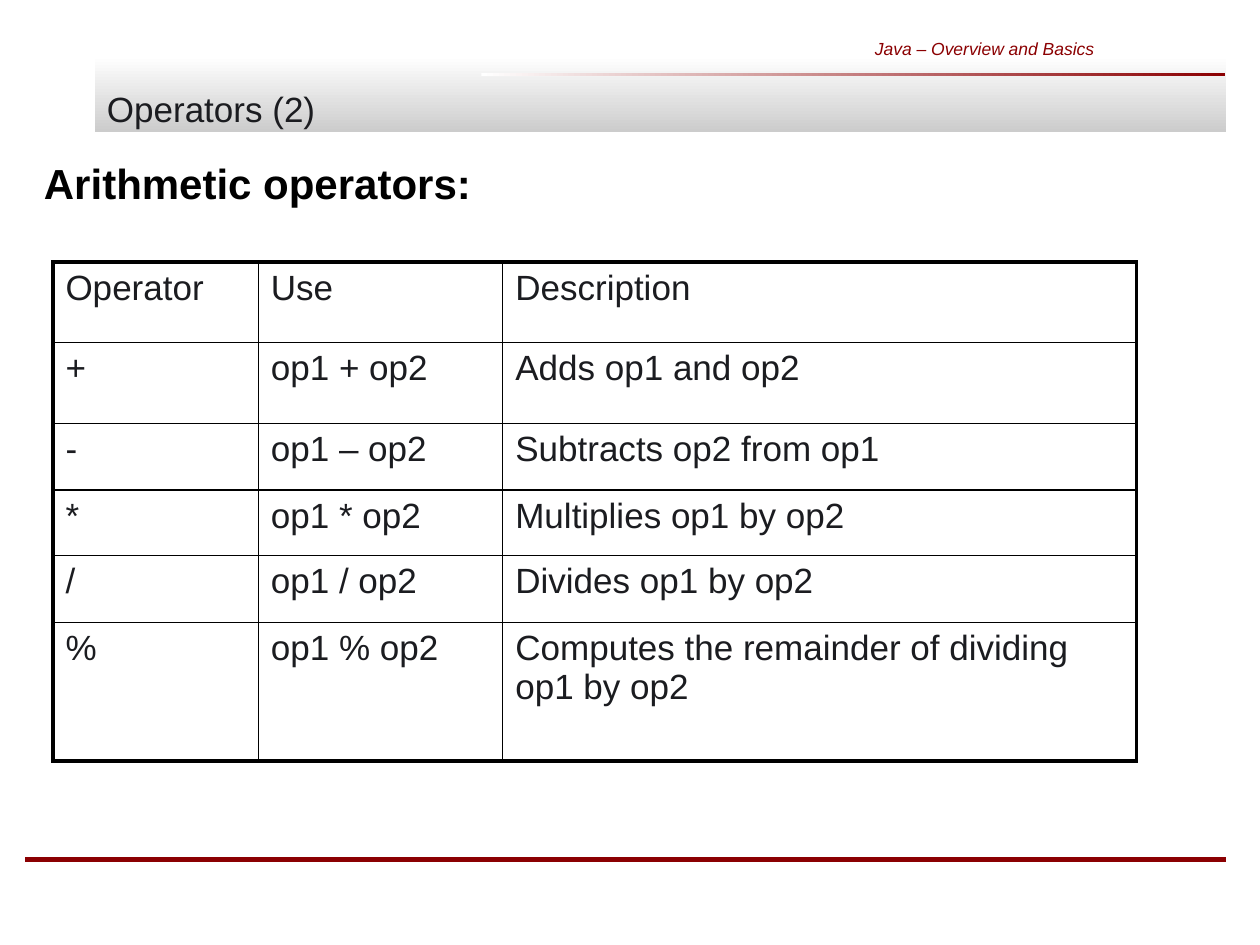
from lxml.etree import SubElement
from pptx import Presentation
from pptx.dml.color import RGBColor
from pptx.enum.shapes import MSO_CONNECTOR, MSO_SHAPE
from pptx.enum.text import MSO_ANCHOR, PP_ALIGN
from pptx.oxml import parse_xml
from pptx.oxml.ns import nsdecls, qn
from pptx.util import Inches, Pt

DARK_RED, WHITE, GREY = "8B0002", "FFFFFF", "CCCCCC"
INK, BLACK = "1B1C20", "000000"
THICK, THIN = 2.25, 1

COLUMN_WIDTHS = [1.63, 1.94, 5.03]
ROW_HEIGHTS = [0.64, 0.64, 0.53, 0.52, 0.53, 1.1]
OPERATORS = [
    ("Operator", "Use", "Description"),
    ("+", "op1 + op2", "Adds op1 and op2"),
    ("-", "op1 – op2", "Subtracts op2 from op1"),
    ("*", "op1 * op2", "Multiplies op1 by op2"),
    ("/", "op1 / op2", "Divides op1 by op2"),
    ("%", "op1 % op2", "Computes the remainder of dividing op1 by op2"),
]


def color(hex_string):
    return RGBColor.from_string(hex_string)


def write(frame, text, size=20, ink=INK, bold=False, italic=False,
          align=PP_ALIGN.LEFT, anchor=MSO_ANCHOR.TOP):
    frame.word_wrap = True
    frame.vertical_anchor = anchor
    paragraph = frame.paragraphs[0]
    paragraph.alignment = align
    run = paragraph.add_run()
    run.text = text
    run.font.size, run.font.name = Pt(size), "Arial"
    run.font.bold, run.font.italic = bold, italic
    run.font.color.rgb = color(ink)
    return run


def add_text(slide, box, text, **text_format):
    shape = slide.shapes.add_textbox(*map(Inches, box))
    return write(shape.text_frame, text, **text_format)


def add_text_shadow(run):
    fill = run.font._element.find(qn("a:solidFill"))
    fill.addnext(parse_xml(
        f'<a:effectLst {nsdecls("a")}><a:outerShdw dist="35921" dir="2700000">'
        f'<a:srgbClr val="{WHITE}"/></a:outerShdw></a:effectLst>'))


def add_gradient_bar(slide, box, start, end, angle):
    bar = slide.shapes.add_shape(MSO_SHAPE.RECTANGLE, *map(Inches, box))
    bar.shadow.inherit = False
    bar.line.fill.background()
    bar.fill.gradient()
    bar.fill.gradient_angle = angle
    for stop, hex_string in zip(bar.fill.gradient_stops, (start, end)):
        stop.color.rgb = color(hex_string)


def add_rule(slide, left, right, top, width):
    rule = slide.shapes.add_connector(
        MSO_CONNECTOR.STRAIGHT, *map(Inches, (left, top, right, top)))
    rule.line.color.rgb = color(DARK_RED)
    rule.line.width = Pt(width)
    SubElement(rule._element.spPr, qn("a:effectLst"))


def set_borders(cell, outer_sides):
    """Thick on the sides that lie on the table's edge, thin elsewhere."""
    properties = cell._tc.get_or_add_tcPr()
    for position, (side, is_outer) in enumerate(outer_sides.items()):
        width = Pt(THICK if is_outer else THIN)
        properties.insert(position, parse_xml(
            f'<a:{side} {nsdecls("a")} w="{width}"><a:solidFill>'
            f'<a:srgbClr val="{BLACK}"/></a:solidFill></a:{side}>'))


def add_operator_table(slide, left, top):
    rows, columns = len(ROW_HEIGHTS), len(COLUMN_WIDTHS)
    size = sum(COLUMN_WIDTHS), sum(ROW_HEIGHTS)
    table = slide.shapes.add_table(
        rows, columns, *map(Inches, (left, top, *size))).table
    for column, width in zip(table.columns, COLUMN_WIDTHS):
        column.width = Inches(width)
    for row, height in zip(table.rows, ROW_HEIGHTS):
        row.height = Inches(height)
    for r, texts in enumerate(OPERATORS):
        for c, text in enumerate(texts):
            cell = table.cell(r, c)
            cell.fill.background()
            write(cell.text_frame, text)
            set_borders(cell, {"lnL": c == 0, "lnR": c == columns - 1,
                               "lnT": r == 0, "lnB": r == rows - 1})


def main():
    presentation = Presentation()
    presentation.slide_width, presentation.slide_height = Inches(10), Inches(7.5)
    slide = presentation.slides.add_slide(presentation.slide_layouts[6])

    # Title band and rules
    add_gradient_bar(slide, (0.75, 0.44, 8.98, 0.61), WHITE, GREY, 270)
    add_rule(slide, 0.2, 9.73, 6.82, 3)
    add_gradient_bar(slide, (3.82, 0.58, 5.9, 0.02), WHITE, DARK_RED, 0)

    # Course name, title and heading
    add_text(slide, (5.87, 0.19, 2.91, 0.39), "Java – Overview and Basics",
             size=10, ink=DARK_RED, italic=True, align=PP_ALIGN.RIGHT,
             anchor=MSO_ANCHOR.MIDDLE)
    title = add_text(slide, (0.75, 0.25, 9.25, 0.83), "Operators (2)",
                     anchor=MSO_ANCHOR.BOTTOM)
    add_text_shadow(title)
    add_text(slide, (0.25, 1.2, 9.75, 0.6), "Arithmetic operators:",
             size=24, ink=BLACK, bold=True)

    # Operators
    add_operator_table(slide, 0.42, 2.08)

    presentation.save("out.pptx")


if __name__ == "__main__":
    main()
